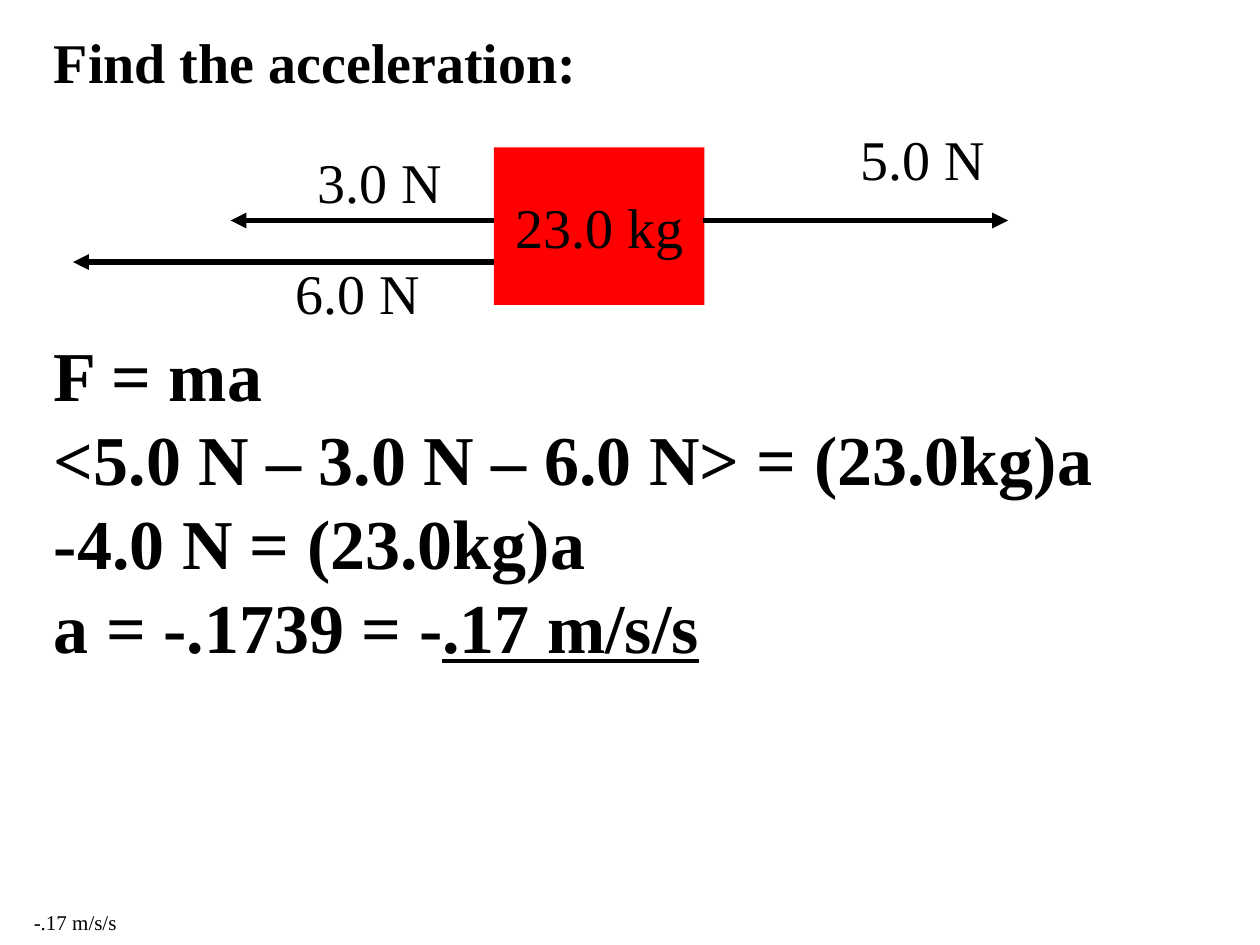
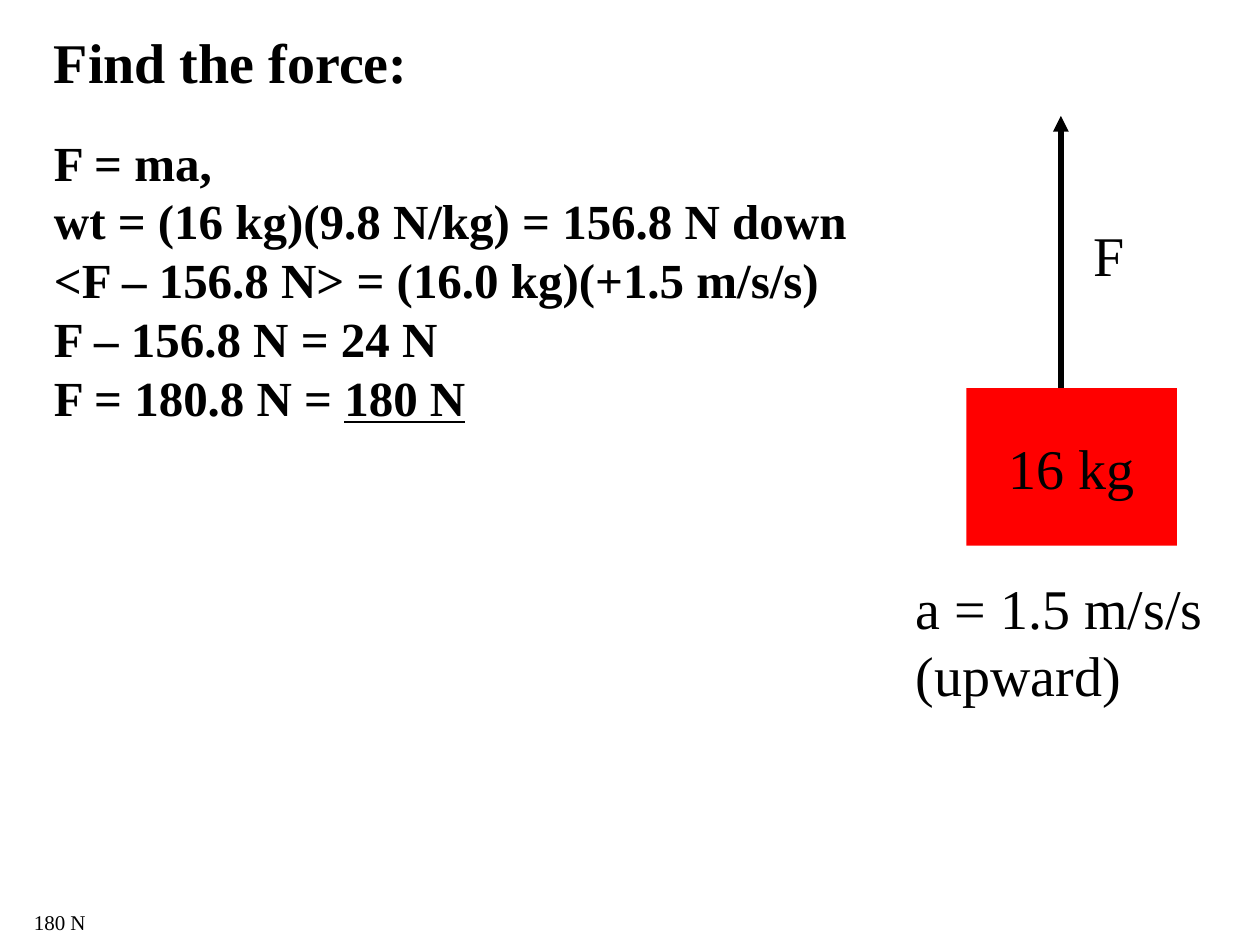
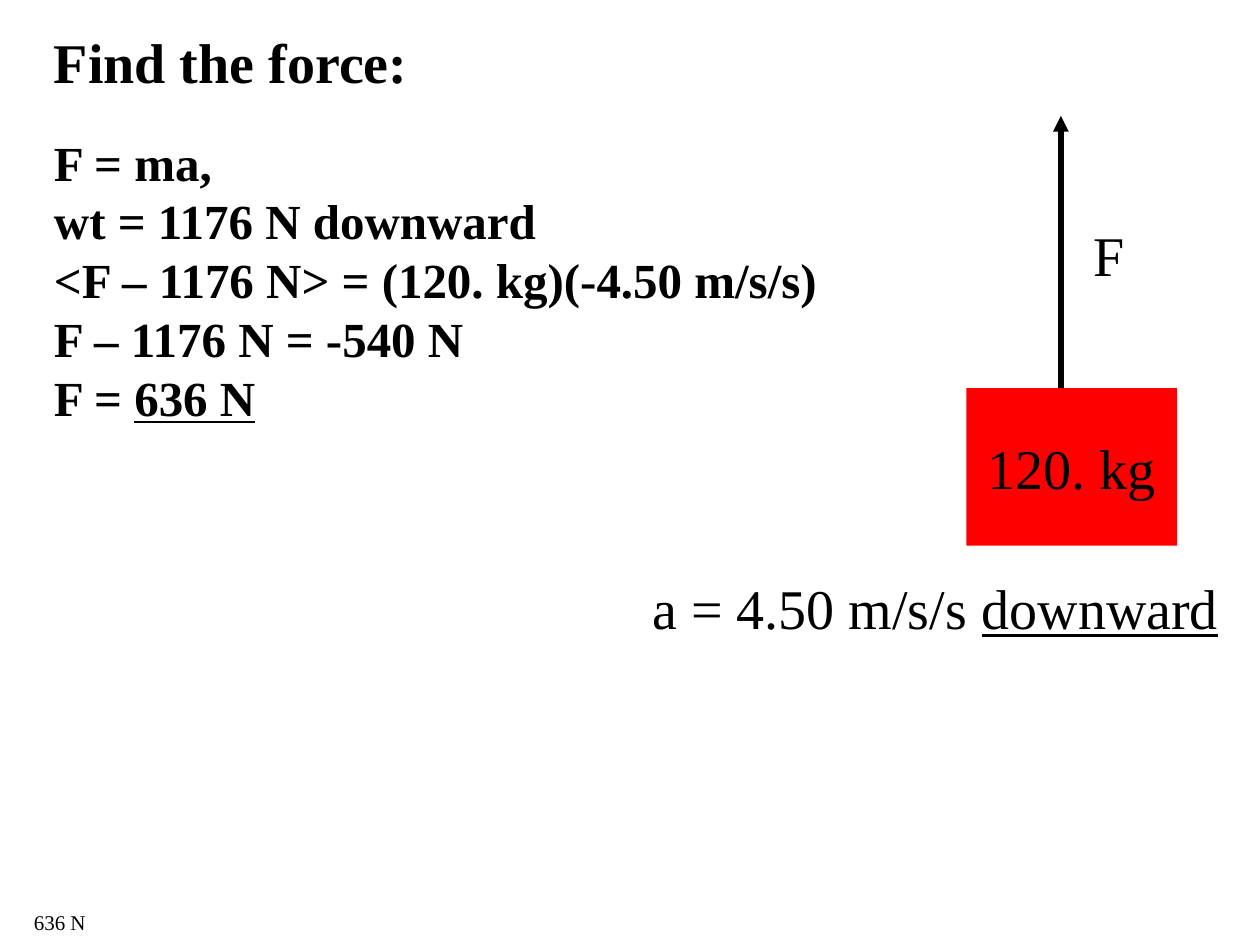
from dataclasses import dataclass

from lxml import etree
from pptx import Presentation
from pptx.dml.color import RGBColor
from pptx.enum.shapes import MSO_CONNECTOR, MSO_SHAPE
from pptx.enum.text import MSO_ANCHOR, MSO_AUTO_SIZE, PP_ALIGN
from pptx.oxml.ns import qn
from pptx.slide import Slide
from pptx.text.text import TextFrame
from pptx.util import Inches, Pt

RECT = MSO_SHAPE.RECTANGLE
LINE = MSO_CONNECTOR.STRAIGHT
MIDDLE = MSO_ANCHOR.MIDDLE
GROW = MSO_AUTO_SIZE.SHAPE_TO_FIT_TEXT
LEFT = PP_ALIGN.LEFT
CENTER = PP_ALIGN.CENTER

FONT = "Times New Roman"
BLACK = "000000"
RED = "FF0000"
BLOCK_W, BLOCK_H = 1.67, 1.25
MARK = "_"


@dataclass(frozen=True)
class Label:
    text: str
    left: float
    top: float
    width: float
    height: float = 0.63
    size: int = 32
    bold: bool = False
    wrap: bool = False


@dataclass(frozen=True)
class Block:
    text: str
    left: float
    top: float


@dataclass(frozen=True)
class Arrow:
    left: float
    top: float
    end_x: float
    end_y: float


@dataclass(frozen=True)
class Problem:
    title: str
    answer: Label
    block: Block
    arrows: list[Arrow]
    labels: list[Label]


def color(code: str) -> RGBColor:
    return RGBColor.from_string(code)


def apply(target: object, values: dict[str, object]) -> None:
    for name, value in values.items():
        setattr(target, name, value)


def write(frame: TextFrame, text: str, size: int, bold: bool = False,
          align: PP_ALIGN = LEFT) -> None:
    for row, line in enumerate(text.split("\n")):
        para = frame.paragraphs[0] if row == 0 else frame.add_paragraph()
        para.alignment = align
        for part, words in enumerate(line.split(MARK)):
            if words:
                run = para.add_run()
                run.text = words
                apply(run.font, {"name": FONT, "size": Pt(size), "bold": bold,
                                 "underline": part % 2 == 1})
                run.font.color.rgb = color(BLACK)


def draw_label(slide: Slide, label: Label) -> None:
    box = slide.shapes.add_textbox(Inches(label.left), Inches(label.top),
                                   Inches(label.width), Inches(label.height))
    apply(box.text_frame, {"word_wrap": label.wrap, "auto_size": GROW})
    write(box.text_frame, label.text, label.size, label.bold)


def draw_block(slide: Slide, block: Block) -> None:
    shape = slide.shapes.add_shape(RECT, Inches(block.left), Inches(block.top),
                                   Inches(BLOCK_W), Inches(BLOCK_H))
    shape.shadow.inherit = False
    shape.fill.solid()
    shape.fill.fore_color.rgb = color(RED)
    shape.line.fill.background()
    apply(shape.text_frame, {"word_wrap": False, "vertical_anchor": MIDDLE})
    write(shape.text_frame, block.text, 32, align=CENTER)


def draw_arrow(slide: Slide, arrow: Arrow) -> None:
    line = slide.shapes.add_connector(
        LINE, Inches(arrow.left), Inches(arrow.top),
        Inches(arrow.end_x), Inches(arrow.end_y))
    line.line.width = Pt(3)
    line.line.color.rgb = color(BLACK)
    stroke = line.line._get_or_add_ln()
    etree.SubElement(stroke, qn("a:tailEnd"), type="triangle")
    etree.SubElement(line._element.spPr, qn("a:effectLst"))


def draw_problem(slide: Slide, item: Problem) -> None:
    title = Label(item.title, 0.33, 0.17, 9.08, bold=True, wrap=True)
    draw_block(slide, item.block)
    for arrow in item.arrows:
        draw_arrow(slide, arrow)
    for label in [item.answer, title, *item.labels]:
        draw_label(slide, label)


def answer(text: str, width: float) -> Label:
    return Label(text, 0.17, 7.17, width, 0.3, 12)


def lift(result: str, mass: str, work: str, note: Label) -> Problem:
    steps = Label(work, 0.33, 1, 6.83, 2.44, 28, True, True)
    return Problem("Find the force:", answer(result, 0.61),
                   Block(mass, 7.67, 3.08), [Arrow(8.42, 3.08, 8.42, 0.92)],
                   [Label("F", 8.58, 1.7, 0.45), steps, note])


PROBLEMS = [
    Problem(
        "Find the acceleration:",
        answer("-.17 m/s/s", 0.86),
        Block("23.0 kg", 3.92, 1.17),
        [Arrow(5.58, 1.75, 8, 1.75),
         Arrow(3.92, 1.75, 1.83, 1.75),
         Arrow(3.92, 2.08, 0.58, 2.08)],
        [Label("5.0 N", 6.73, 0.94, 1.19),
         Label("3.0 N", 2.42, 1.12, 1.19),
         Label("6.0 N", 2.25, 2, 1.19),
         Label("F = ma\n"
               "<5.0 N – 3.0 N – 6.0 N> = (23.0kg)a\n"
               "-4.0 N = (23.0kg)a\n"
               "a = -.1739 = -_.17 m/s/s_",
               0.33, 2.58, 9.33, 2.77, 40, True, True)],
    ),
    lift("180 N", "16 kg",
         "F = ma,\n"
         "wt = (16 kg)(9.8 N/kg) = 156.8 N down\n"
         "<F – 156.8 N> = (16.0 kg)(+1.5 m/s/s)\n"
         "F – 156.8 N = 24 N\n"
         "F = 180.8 N = _180 N_",
         Label("a = 1.5 m/s/s\n(upward)", 7.17, 4.5, 2.48, 1.17)),
    lift("636 N", "120. kg",
         "F = ma,\n"
         "wt = 1176 N downward\n"
         "<F – 1176 N> = (120. kg)(-4.50 m/s/s)\n"
         "F – 1176 N = -540 N\n"
         "F = _636 N_",
         Label("a = 4.50 m/s/s _downward_", 5.08, 4.5, 4.82, wrap=True)),
]


def main() -> None:
    deck = Presentation()
    apply(deck, {"slide_width": Inches(10), "slide_height": Inches(7.5)})
    blank = deck.slide_layouts[6]
    for item in PROBLEMS:
        draw_problem(deck.slides.add_slide(blank), item)
    deck.save("out.pptx")


if __name__ == "__main__":
    main()
